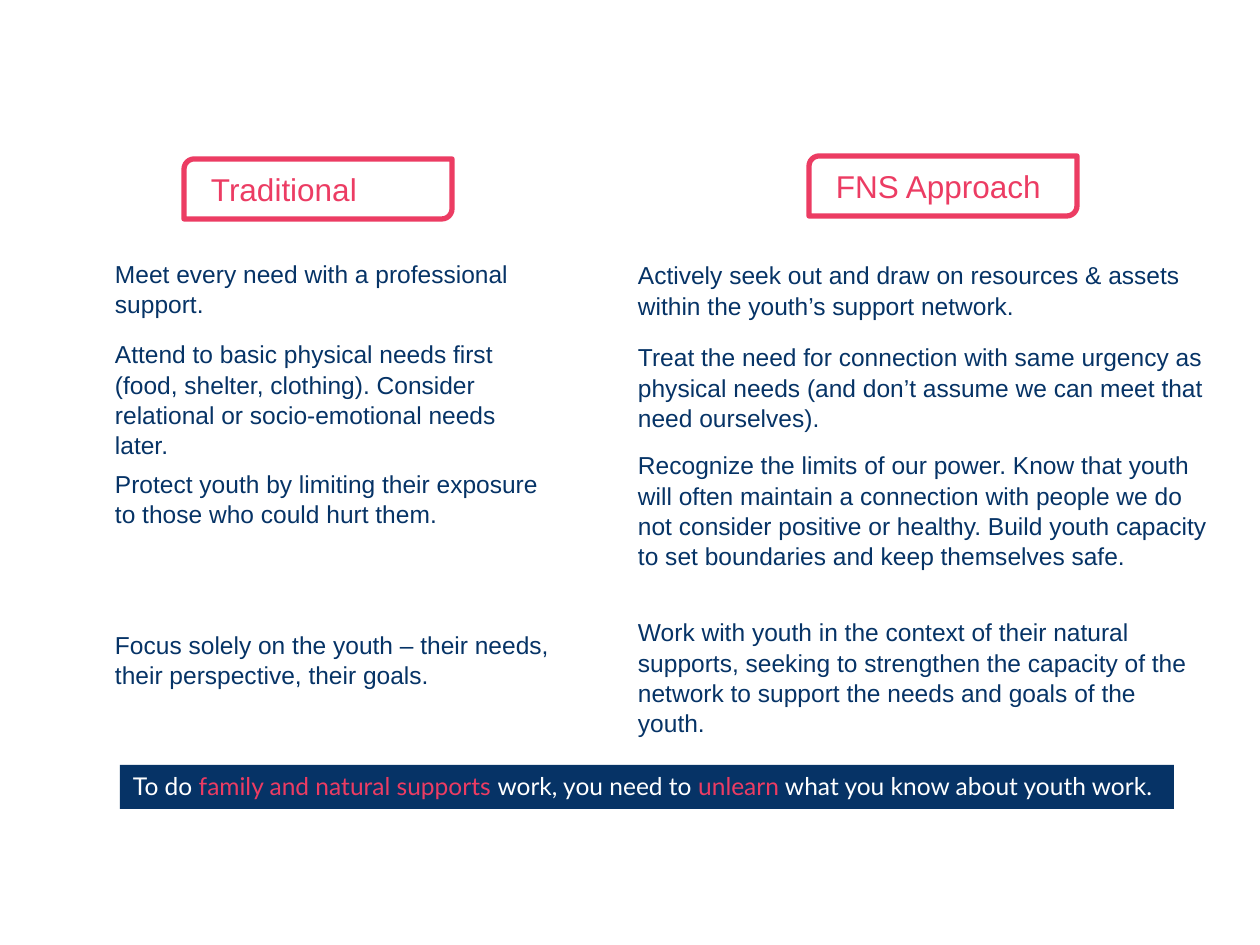
import pptx
import pptx.dml.color
import pptx.enum.shapes
import pptx.enum.text
import pptx.util

NAVY = pptx.dml.color.RGBColor(0x06, 0x33, 0x66)
PINK = pptx.dml.color.RGBColor(0xEC, 0x3C, 0x63)
WHITE = pptx.dml.color.RGBColor(0xFF, 0xFF, 0xFF)

SCALE = 914400 / 126  # EMU in one px

TABLE_PAD = {"margin_left": 8, "margin_right": 8, "margin_top": 0, "margin_bottom": 0}
BOX_PAD = {"margin_left": 13, "margin_right": 13, "margin_top": 6, "margin_bottom": 6}
BODY = {"name": "Arial", "size": pptx.util.Pt(14)}
HEAD = {"name": "Arial", "size": pptx.util.Pt(18)}
NOTE = {"name": "Lato", "size": pptx.util.Pt(14)}

OLD_WAY = [
    (81, "Meet every need with a professional support."),
    (111, "Attend to basic physical needs first (food, shelter, clothing). "
          "Consider relational or socio-emotional needs later."),
    (161, "Protect youth by limiting their exposure to those who could hurt them."),
    (116, "Focus solely on the youth – their needs, their perspective, their goals."),
]
NEW_WAY = [
    (82, "Actively seek out and draw on resources & assets within the youth’s "
         "support network."),
    (108, "Treat the need for connection with same urgency as physical needs "
          "(and don’t assume we can meet that need ourselves)."),
    (167, "Recognize the limits of our power. Know that youth will often maintain "
          "a connection with people we do not consider positive or healthy. "
          "Build youth capacity to set boundaries and keep themselves safe."),
    (130, "Work with youth in the context of their natural supports, seeking to "
          "strengthen the capacity of the network to support the needs and goals "
          "of the youth."),
]
MESSAGE = [
    ("To do ", WHITE),
    ("family and natural supports ", PINK),
    ("work, you need to ", WHITE),
    ("unlearn", PINK),
    (" what you know about youth work.", WHITE),
]


def px(num):
    return pptx.util.Emu(round(num * SCALE))


def pad(frame, sides):
    for side, num in sides.items():
        setattr(frame, side, px(num))


def add_run(para, text, style, color):
    run = para.add_run()
    run.text = text
    for key, value in style.items():
        setattr(run.font, key, value)
    run.font.color.rgb = color


def add_list(slide, left, top, width, rows):
    """Add a one-column table of (height, text) rows."""
    total = sum(height for height, _ in rows)
    table = slide.shapes.add_table(
        len(rows), 1, px(left), px(top), px(width), px(total)).table
    table.first_row = table.horz_banding = False
    for row, (height, text) in zip(table.rows, rows):
        row.height = px(height)
        cell = row.cells[0]
        pad(cell, TABLE_PAD)
        cell.fill.solid()
        cell.fill.fore_color.rgb = WHITE
        para = cell.text_frame.paragraphs[0]
        para.line_spacing = 1.1
        add_run(para, text, BODY, NAVY)


def add_label(slide, left, top, text):
    """Add a column heading in a box with two round corners."""
    kind = pptx.enum.shapes.MSO_SHAPE.ROUND_2_DIAG_RECTANGLE
    box = slide.shapes.add_shape(kind, px(left), px(top), px(268), px(60))
    box.shadow.inherit = False
    box.adjustments[0] = 0.17
    box.fill.solid()
    box.fill.fore_color.rgb = WHITE
    box.line.color.rgb = PINK
    box.line.width = pptx.util.Pt(3)
    frame = box.text_frame
    frame.word_wrap = True
    frame.vertical_anchor = pptx.enum.text.MSO_ANCHOR.MIDDLE
    pad(frame, BOX_PAD)
    para = frame.paragraphs[0]
    para.alignment = pptx.enum.text.PP_ALIGN.LEFT
    para._p.get_or_add_pPr().set("marL", str(px(11)))
    add_run(para, text, HEAD, PINK)


def add_banner(slide, left, top, width, height, parts):
    box = slide.shapes.add_textbox(px(left), px(top), px(width), px(height))
    box.fill.solid()
    box.fill.fore_color.rgb = NAVY
    frame = box.text_frame
    frame.word_wrap = True
    pad(frame, BOX_PAD)
    for text, color in parts:
        add_run(frame.paragraphs[0], text, NOTE, color)


def main():
    deck = pptx.Presentation()
    deck.slide_width, deck.slide_height = px(1260), px(945)
    slide = deck.slides.add_slide(deck.slide_layouts[6])
    add_banner(slide, 120, 765, 1054, 44, MESSAGE)
    add_list(slide, 107, 258, 452, OLD_WAY)
    add_list(slide, 630, 260, 588, NEW_WAY)
    add_label(slide, 184, 159, "Traditional")
    add_label(slide, 809, 156, "FNS Approach")
    deck.save("out.pptx")


if __name__ == "__main__":
    main()
